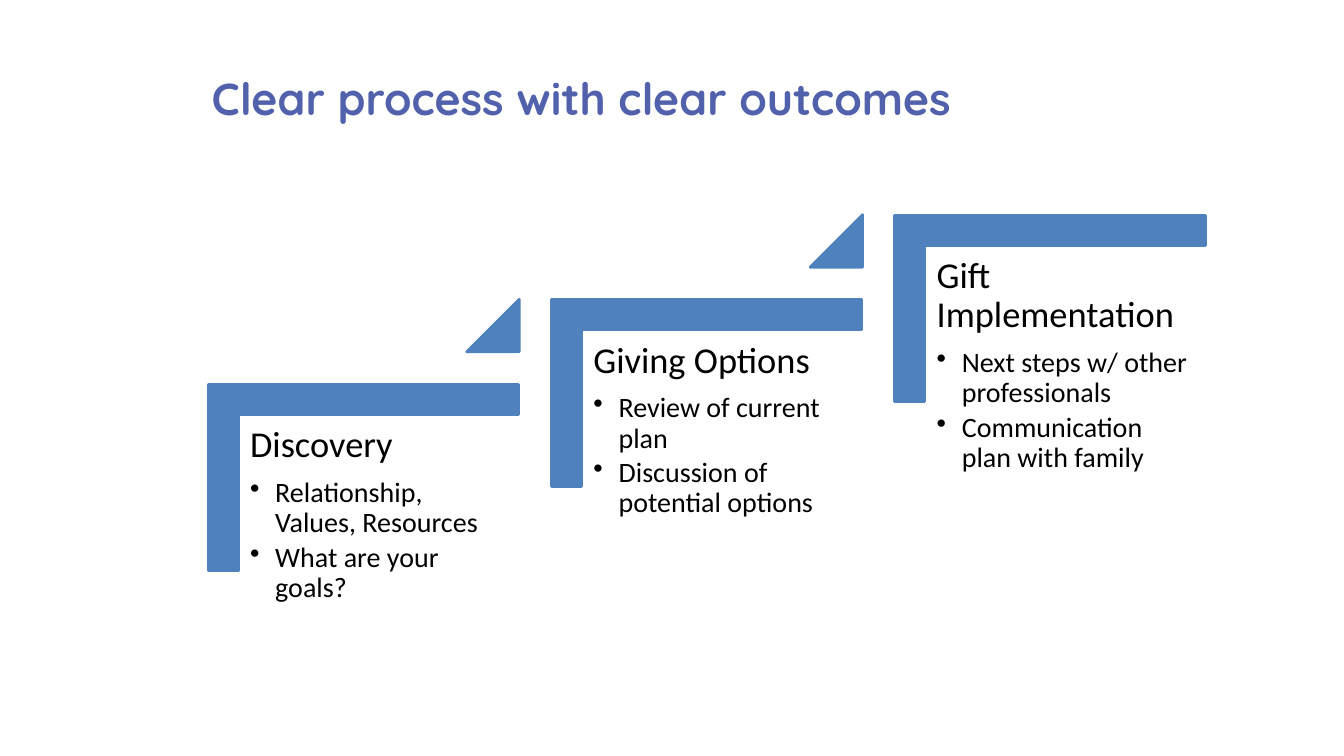
from dataclasses import dataclass

from lxml.etree import SubElement
from pptx import Presentation
from pptx.dml.color import RGBColor
from pptx.enum.shapes import MSO_SHAPE as Preset
from pptx.enum.text import MSO_ANCHOR as Anchor, MSO_AUTO_SIZE as AutoSize, PP_ALIGN as Align
from pptx.oxml.ns import qn
from pptx.shapes.autoshape import Shape
from pptx.slide import Slide
from pptx.util import Inches, Pt

BLUE = "4F81BD"
STEP_RIGHT, STEP_UP = 3.405, 0.84


@dataclass
class Stage:
    heading: str
    points: list[str]


STAGES = [
    Stage("Discovery", ["Relationship, Values, Resources", "What are your goals?"]),
    Stage("Giving Options", ["Review of current plan", "Discussion of potential options"]),
    Stage("Gift Implementation", ["Next steps w/ other professionals", "Communication plan with family"]),
]


def color(value: str) -> RGBColor:
    return RGBColor.from_string(value)


def apply(target: object, values: dict) -> None:
    for name, value in values.items():
        setattr(target, name, value)


def add_blue_shape(slide: Slide, preset: Preset, left: float, top: float,
                   width: float, height: float) -> Shape:
    shape = slide.shapes.add_shape(preset, Inches(left), Inches(top), Inches(width), Inches(height))
    shape.shadow.inherit = False
    shape.fill.solid()
    shape.fill.fore_color.rgb = color(BLUE)
    shape.line.color.rgb = color(BLUE)
    shape.line.width = Pt(2)
    return shape


def add_stage_text(slide: Slide, stage: Stage, left: float, top: float) -> None:
    box = slide.shapes.add_textbox(Inches(left), Inches(top), Inches(2.78), Inches(2.44))
    frame = box.text_frame
    frame.word_wrap = True
    apply(frame, {f"margin_{side}": Inches(0.11) for side in ("left", "top", "right", "bottom")})
    for index, text in enumerate([stage.heading, *stage.points]):
        is_heading = index == 0
        paragraph = frame.paragraphs[0] if is_heading else frame.add_paragraph()
        paragraph.text = text
        apply(paragraph, {"line_spacing": 0.9, "space_after": Pt(9 if is_heading else 3),
                          "level": 0 if is_heading else 1})
        if not is_heading:
            properties = paragraph._p.get_or_add_pPr()
            properties.set("marL", str(Inches(0.25)))
            properties.set("indent", str(-Inches(0.25)))
            SubElement(properties, qn("a:buChar"), char="•")
        apply(paragraph.font, {"name": "Calibri", "size": Pt(26 if is_heading else 20)})
        paragraph.font.color.rgb = color("000000")


def add_title(slide: Slide, text: str) -> None:
    title = slide.shapes.title
    apply(title, {"left": Inches(2), "top": Inches(0.65), "width": Inches(10.92), "height": Inches(0.85)})
    apply(title.text_frame, {"text": text, "vertical_anchor": Anchor.TOP,
                             "auto_size": AutoSize.NONE, "word_wrap": True})
    paragraph = title.text_frame.paragraphs[0]
    paragraph.alignment = Align.LEFT
    apply(paragraph.font, {"name": "Quicksand", "size": Pt(32), "bold": True})
    paragraph.font.color.rgb = color("5261AC")


def main() -> None:
    presentation = Presentation()
    apply(presentation, {"slide_width": Inches(13.33), "slide_height": Inches(7.5)})
    slide = presentation.slides.add_slide(presentation.slide_layouts[5])
    add_title(slide, "Clear process with clear outcomes")
    for index, stage in enumerate(STAGES):
        right, up = index * STEP_RIGHT, index * STEP_UP
        corner = add_blue_shape(slide, Preset.CORNER, 2.68 + right, 3.2 - up, 1.85, 3.08)
        corner.rotation = 90
        corner.adjustments[0] = corner.adjustments[1] = 0.161
        add_stage_text(slide, stage, 2.37 + right, 4.12 - up)
        if index < len(STAGES) - 1:
            triangle = add_blue_shape(slide, Preset.ISOSCELES_TRIANGLE,
                                      4.63 + right, 2.97 - up, 0.52, 0.52)
            triangle.adjustments[0] = 1
    presentation.save("out.pptx")


if __name__ == "__main__":
    main()
